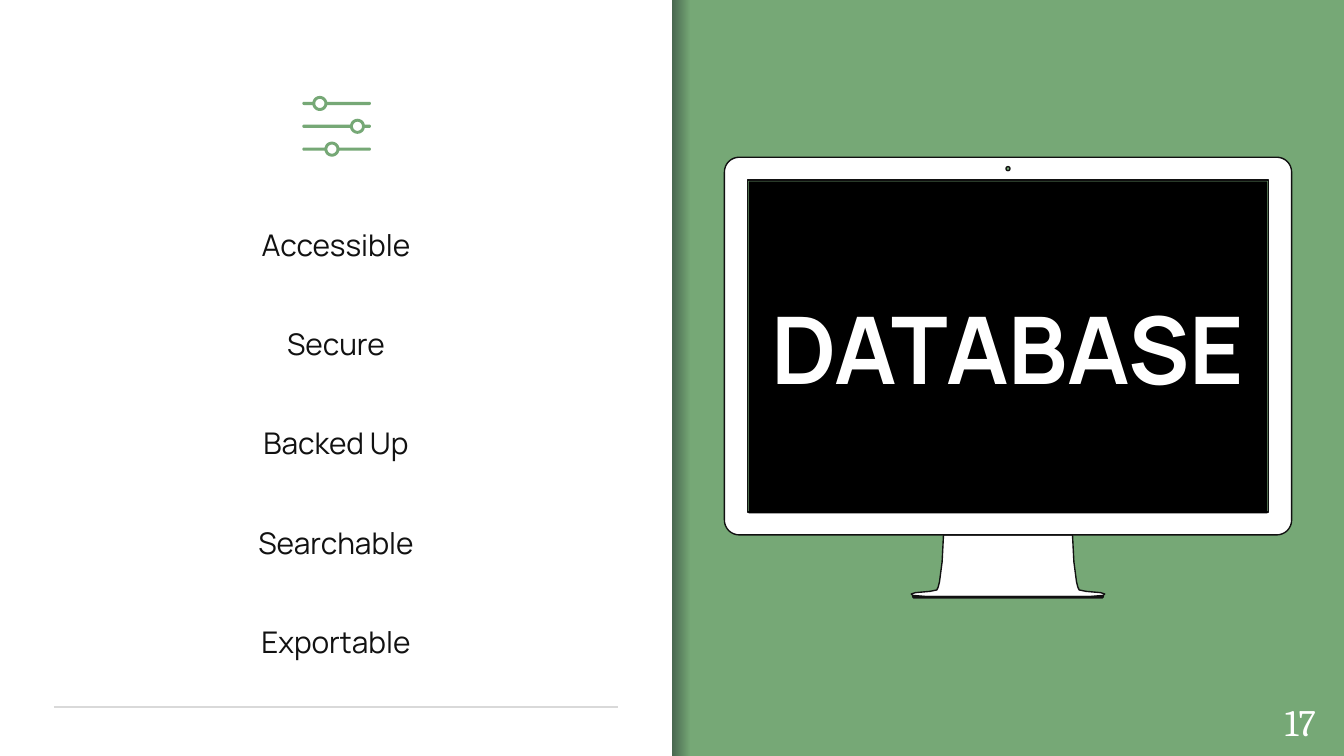
from dataclasses import dataclass
from math import asin, cos, degrees, radians, sin

from lxml.etree import SubElement
from pptx import Presentation
from pptx.dml.color import RGBColor
from pptx.enum.shapes import MSO_CONNECTOR as Connector, MSO_SHAPE as Preset
from pptx.enum.text import MSO_ANCHOR as Anchor, MSO_AUTO_SIZE as AutoSize, PP_ALIGN as Align
from pptx.oxml.ns import qn
from pptx.util import Pt

PX = 9144  # EMU in one px, 100 px to the inch
SLIDE_WIDTH, PANEL_HEIGHT = 1000, 563
GREEN, WHITE, BLACK, INK, RULE, SHADE = "76A876", "FFFFFF", "000000", "111111", "D9D9D9", "000014"
SECTION_LAYOUT = 2
Points = list[tuple[float, float]]


@dataclass(frozen=True)
class Box:
    left: int
    top: int
    width: int
    height: int

    def emu(self) -> list[int]:
        return [side * PX for side in (self.left, self.top, self.width, self.height)]


@dataclass(frozen=True)
class Slider:
    knob_x: int
    y: int


QUALITIES = ["Accessible", "Secure", "Backed Up", "Searchable", "Exportable"]
FIRST_QUALITY = Box(181, 145, 138, 61)
QUALITY_STEP = 74
SLIDERS = [Slider(238, 77), Slider(266, 94), Slider(247, 111)]
SLIDER_LEFT, SLIDER_RIGHT = 225, 276
MONITOR = Box(539, 117, 422, 281)
SCREEN_OPENING = Box(556, 134, 388, 247)
SCREEN = Box(557, 135, 386, 247)
MONITOR_CENTRE = 750
# Offsets from the monitor's centre line, down the right side of the stand
STAND_SIDE = [(48, 398), (49, 418), (51, 433), (52, 437), (53, 439), (58, 440),
              (69, 441), (72, 442), (71, 443), (60, 444)]
BASE_SIDE = [(71, 444), (70, 445)]


def color(value: str) -> RGBColor:
    return RGBColor.from_string(value)


def arc(x: float, y: float, radius: float, start: float, end: float, steps: int = 12) -> Points:
    """Points on a circle, with angles in degrees clockwise from the right."""
    angles = [radians(start + (end - start) * step / steps) for step in range(steps + 1)]
    return [(x + radius * cos(angle), y + radius * sin(angle)) for angle in angles]


def rounded(box: Box, radius: float) -> Points:
    left, top = box.left + radius, box.top + radius
    right, bottom = box.left + box.width - radius, box.top + box.height - radius
    corners = [(left, top, 180), (right, top, 270), (right, bottom, 0), (left, bottom, 90)]
    return [point for x, y, start in corners for point in arc(x, y, radius, start, start + 90)]


def mirrored(side: Points) -> Points:
    """A symmetric outline from its right side."""
    return ([(MONITOR_CENTRE + x, y) for x, y in side]
            + [(MONITOR_CENTRE - x, y) for x, y in reversed(side)])


def slider_contours(slider: Slider) -> list[Points]:
    half_bar, ring, hole = 1.2, 5.6, 3.4
    x, y = slider.knob_x, slider.y
    gap = degrees(asin(half_bar / ring))
    outline = [*arc(SLIDER_LEFT + half_bar, y, half_bar, 90, 270),
               *arc(x, y, ring, 180 + gap, 360 - gap),
               *arc(SLIDER_RIGHT - half_bar, y, half_bar, -90, 90),
               *arc(x, y, ring, gap, 180 - gap)]
    return [outline, arc(x, y, hole, 360, 0, 24)]


def paint(shape, fill: str, line: str | None = None) -> None:
    shape.shadow.inherit = False
    shape.fill.solid()
    shape.fill.fore_color.rgb = color(fill)
    if line:
        shape.line.color.rgb = color(line)
        shape.line.width = Pt(0.75)
    else:
        shape.line.fill.background()


def draw_contours(shapes, contours: list[Points], fill: str, line: str | None = None) -> None:
    scaled = [[(x * PX, y * PX) for x, y in contour] for contour in contours]
    builder = shapes.build_freeform(*scaled[0][0], scale=1.0)
    for number, contour in enumerate(scaled):
        if number:
            builder.move_to(*contour[0])
        builder.add_line_segments(contour[1:], close=True)
    paint(builder.convert_to_shape(), fill, line)


def draw_rectangle(shapes, box: Box, fill: str):
    shape = shapes.add_shape(Preset.RECTANGLE, *box.emu())
    paint(shape, fill)
    return shape


def draw_fading_shade(shapes, box: Box) -> None:
    shape = draw_rectangle(shapes, box, SHADE)
    shape.fill.gradient()
    shape.fill.gradient_angle = 0
    for stop in shape.fill.gradient_stops:
        stop.color.rgb = color(SHADE)
    for tone, alpha in zip(shape._element.iter(qn("a:srgbClr")), ("50000", "0")):
        SubElement(tone, qn("a:alpha"), val=alpha)


def draw_rule(shapes, left: int, right: int, y: int) -> None:
    rule = shapes.add_connector(Connector.STRAIGHT, left * PX, y * PX, right * PX, y * PX)
    rule.line.color.rgb = color(RULE)
    rule.line.width = Pt(0.75)
    SubElement(rule._element.spPr, qn("a:effectLst"))


def write(shape, text: str, size: int, tone: str, font: str = "Manrope", bold: bool = False,
          anchor=Anchor.MIDDLE, **spacing) -> None:
    frame = shape.text_frame
    frame_format = {"word_wrap": True, "auto_size": AutoSize.NONE, "vertical_anchor": anchor}
    frame_format |= {f"margin_{side}": 10 * PX for side in ("left", "top", "right", "bottom")}
    para = frame.paragraphs[0]
    span = para.add_run()
    span.text = text
    span.font.color.rgb = color(tone)
    formats = [(frame, frame_format),
               (para, {"alignment": Align.CENTER, **spacing}),
               (span.font, {"name": font, "size": Pt(size), "bold": bold})]
    for target, values in formats:
        for name, value in values.items():
            setattr(target, name, value)


def draw_quality(slide, text: str, box: Box) -> None:
    slide.shapes.clone_placeholder(slide.slide_layout.placeholders[1])
    body = slide.shapes[-1]
    body.left, body.top, body.width, body.height = box.emu()
    write(body, text, 16, INK, anchor=Anchor.TOP, line_spacing=1.5, space_before=Pt(6))


def draw_monitor(shapes) -> None:
    group = shapes.add_group_shape().shapes
    contours = [rounded(MONITOR, 11), rounded(SCREEN_OPENING, 0),
                arc(MONITOR_CENTRE, 125.5, 1.5, 360, 0),
                mirrored(STAND_SIDE), mirrored(BASE_SIDE)]
    draw_contours(group, contours, WHITE, INK)
    write(draw_rectangle(group, SCREEN, BLACK), "DATABASE", 50, WHITE, bold=True)


def main() -> None:
    deck = Presentation()
    deck.slide_width, deck.slide_height = SLIDE_WIDTH * PX, SLIDE_WIDTH * PX * 9 // 16
    slide = deck.slides.add_slide(deck.slide_layouts[SECTION_LAYOUT])
    for placeholder in list(slide.placeholders):
        placeholder.element.getparent().remove(placeholder.element)
    slide.background.fill.solid()
    slide.background.fill.fore_color.rgb = color(GREEN)

    shapes = slide.shapes
    draw_fading_shade(shapes, Box(497, 0, 16, PANEL_HEIGHT))
    draw_rectangle(shapes, Box(0, 0, 500, PANEL_HEIGHT), WHITE)
    draw_rule(shapes, 40, 460, 526)
    draw_monitor(shapes)
    draw_contours(shapes, [part for slider in SLIDERS for part in slider_contours(slider)], GREEN)
    first = FIRST_QUALITY
    for row, quality in enumerate(QUALITIES):
        top = first.top + row * QUALITY_STEP
        draw_quality(slide, quality, Box(first.left, top, first.width, first.height))
    page_number = shapes.add_textbox(*Box(935, 519, 65, 36).emu())
    write(page_number, "17", 20, WHITE, font="Cambria")
    deck.save("out.pptx")


if __name__ == "__main__":
    main()
